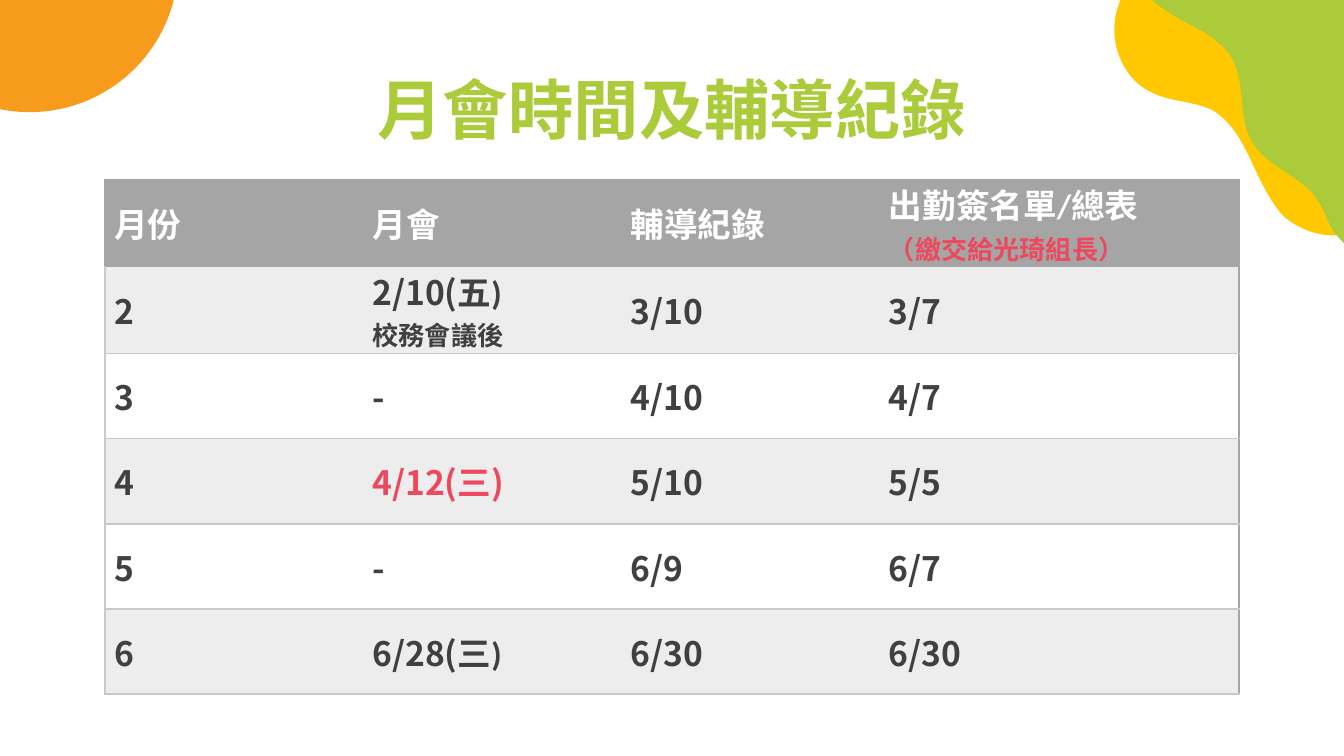
"""Build a slide with a monthly meeting and record schedule table."""
from lxml import etree
from pptx import Presentation
from pptx import util as u
from pptx.dml import color
from pptx.enum import shapes, text
from pptx.oxml import ns

COLORS = {
    "green": "ABCB3B", "yellow": "FFC800", "orange": "F79B1D", "red": "EE485E",
    "dark": "404040", "white": "FFFFFF", "header": "A5A5A5", "band": "EDEDED",
    "rule": "C9C9C9",
}
NOTO, CALIBRI = "Noto Sans CJK SC", "Calibri"
SLIDE_WIDTH, SLIDE_HEIGHT = 25.4, 14.29
COLUMN_WIDTHS = [4.88, 4.88, 4.88, 6.8]
ROW_HEIGHT = 1.61

YELLOW_START = (21.16, 0)
YELLOW_CURVES = [
    ((21.16, 0.03), (21.16, 0.03), (21.16, 0.05)),
    ((20.9, 0.66), (21.16, 1.47), (21.77, 1.75)),
    ((22.12, 1.93), (22.56, 1.91), (22.91, 2.08)),
    ((23.27, 2.29), (23.47, 2.67), (23.65, 3.05)),
    ((23.83, 3.43), (24, 3.81), (24.26, 4.09)),
    ((24.56, 4.34), (24.92, 4.47), (25.3, 4.45)),
    ((25.32, 4.45), (25.37, 4.42), (25.4, 4.42)),
]
GREEN_START = (21.77, 0)
GREEN_CURVES = [
    ((21.97, 0.18), (22.23, 0.33), (22.48, 0.46)),
    ((22.73, 0.58), (22.99, 0.74), (23.19, 0.97)),
    ((23.6, 1.47), (23.34, 2.21), (23.7, 2.74)),
    ((23.98, 3.15), (24.56, 3.33), (24.87, 3.73)),
    ((25.02, 3.94), (25.07, 4.17), (25.2, 4.37)),
    ((25.27, 4.45), (25.32, 4.52), (25.4, 4.6)),
]

HEADERS = ["月份", "月會", "輔導紀錄", "出勤簽名單/總表"]
HEADER_NOTE = "（繳交給光琦組長）"
MEETING_NOTE = "校務會議後"
SCHEDULE = [
    ["2", ("2/10(", "五)"), "3/10", "3/7"],
    ["3", "-", "4/10", "4/7"],
    ["4", "4/12(三)", "5/10", "5/5"],
    ["5", "-", "6/9", "6/7"],
    ["6", ("6/28(", "三)"), "6/30", "6/30"],
]


def rgb(name):
    """Return a named colour."""
    return color.RGBColor.from_string(COLORS[name])


def add_run(paragraph, content, size, color_name, font=NOTO):
    """Add one bold run."""
    run = paragraph.add_run()
    run.text = content
    run.font.size = u.Pt(size)
    run.font.bold = True
    run.font.name = font
    run.font.color.rgb = rgb(color_name)
    east_asian = etree.SubElement(run.font._element, ns.qn("a:ea"))
    east_asian.set("typeface", NOTO)


def paint(shape, color_name):
    """Give a shape a flat fill without line or shadow."""
    shape.shadow.inherit = False
    shape.fill.solid()
    shape.fill.fore_color.rgb = rgb(color_name)
    shape.line.fill.background()


def bend_segments(shape, curves):
    """Turn the leading straight segments of a freeform into cubic curves."""
    lines = list(shape.element.iter(ns.qn("a:lnTo")))
    for line, curve in zip(lines, curves):
        bezier = etree.Element(ns.qn("a:cubicBezTo"))
        for x, y in curve:
            etree.SubElement(bezier, ns.qn("a:pt"), x=str(u.Cm(x) - shape.left),
                             y=str(u.Cm(y) - shape.top))
        line.getparent().replace(line, bezier)


def add_corner_blob(slide, start, curves, color_name):
    """Add a wavy shape filling the top right corner."""
    corners = [start] + [curve[-1] for curve in curves] + [(SLIDE_WIDTH, 0)]
    points = [(u.Cm(x), u.Cm(y)) for x, y in corners]
    builder = slide.shapes.build_freeform(*points[0], scale=1.0)
    builder.add_line_segments(points[1:], close=True)
    blob = builder.convert_to_shape()
    bend_segments(blob, curves)
    paint(blob, color_name)


def add_circle(slide, left, top, diameter, color_name):
    """Add a plain circle."""
    circle = slide.shapes.add_shape(
        shapes.MSO_SHAPE.OVAL, u.Cm(left), u.Cm(top), u.Cm(diameter), u.Cm(diameter))
    paint(circle, color_name)


def set_title(slide, content):
    """Place the title in front of the decorations and fill it."""
    title = slide.shapes.title
    title.element.getparent().append(title.element)
    title.left, title.top = u.Cm(2), u.Cm(1.24)
    title.width, title.height = u.Cm(21.4), u.Cm(1.6)
    frame = title.text_frame
    frame.word_wrap = True
    frame.auto_size = text.MSO_AUTO_SIZE.NONE
    frame.vertical_anchor = text.MSO_ANCHOR.MIDDLE
    frame.margin_left = frame.margin_right = u.Cm(0.25)
    frame.margin_top = frame.margin_bottom = u.Cm(0.25)
    paragraph = frame.paragraphs[0]
    paragraph.alignment = text.PP_ALIGN.CENTER
    add_run(paragraph, content, 35, "green")


def set_borders(cell, borders):
    """Set left, right, top and bottom lines, None meaning no line."""
    properties = cell._tc.get_or_add_tcPr()
    for side, color_name in zip("LRTB", borders):
        line = etree.SubElement(properties, ns.qn(f"a:ln{side}"), w=str(u.Pt(1)))
        if color_name is None:
            etree.SubElement(line, ns.qn("a:noFill"))
        else:
            fill = etree.SubElement(line, ns.qn("a:solidFill"))
            etree.SubElement(fill, ns.qn("a:srgbClr"), val=COLORS[color_name])


def format_cell(cell, row, column):
    """Set margins, borders and fill by position in the grid."""
    cell.margin_left = cell.margin_right = u.Cm(0.18)
    cell.margin_top = cell.margin_bottom = 0
    cell.vertical_anchor = text.MSO_ANCHOR.MIDDLE
    left = None if column else ("rule" if row else "header")
    right = "header" if column == len(COLUMN_WIDTHS) - 1 else None
    top = "rule" if row > 1 else "header"
    bottom = "rule" if row else "header"
    set_borders(cell, (left, right, top, bottom))
    if row and row % 2 == 0:
        cell.fill.background()
    else:
        cell.fill.solid()
        cell.fill.fore_color.rgb = rgb("band" if row else "header")


def write_cell(cell, content, color_name, font, note=None, note_color=None):
    """Write a value and an optional smaller second line."""
    parts = (content,) if isinstance(content, str) else content
    paragraph = cell.text_frame.paragraphs[0]
    paragraph.alignment = text.PP_ALIGN.JUSTIFY
    for index, part in enumerate(parts):
        add_run(paragraph, part, 18, color_name, CALIBRI if index else font)
    if note:
        paragraph = cell.text_frame.add_paragraph()
        paragraph.alignment = text.PP_ALIGN.JUSTIFY
        add_run(paragraph, note, 14, note_color, CALIBRI)


def add_schedule(slide):
    """Add the schedule table."""
    rows = [HEADERS] + SCHEDULE
    table = slide.shapes.add_table(
        len(rows), len(COLUMN_WIDTHS), u.Cm(1.98), u.Cm(3.4),
        u.Cm(sum(COLUMN_WIDTHS)), u.Cm(ROW_HEIGHT * len(rows))).table
    table.horz_banding = False
    for column, width in zip(table.columns, COLUMN_WIDTHS):
        column.width = u.Cm(width)
    notes = {(0, 3): (HEADER_NOTE, "red"), (1, 1): (MEETING_NOTE, "dark")}
    for row, values in enumerate(rows):
        table.rows[row].height = u.Cm(ROW_HEIGHT)
        for column, value in enumerate(values):
            cell = table.cell(row, column)
            format_cell(cell, row, column)
            color_name = "dark" if row else "white"
            if (row, column) == (3, 1):
                color_name = "red"
            write_cell(cell, value, color_name, NOTO if row else CALIBRI,
                       *notes.get((row, column), ()))


def main():
    """Build and save the presentation."""
    presentation = Presentation()
    presentation.slide_width = u.Cm(SLIDE_WIDTH)
    presentation.slide_height = u.Cm(SLIDE_HEIGHT)
    slide = presentation.slides.add_slide(presentation.slide_layouts[5])
    add_corner_blob(slide, YELLOW_START, YELLOW_CURVES, "yellow")
    add_corner_blob(slide, GREEN_START, GREEN_CURVES, "green")
    add_circle(slide, -2.25, -3.5, 5.62, "orange")
    set_title(slide, "月會時間及輔導紀錄")
    add_schedule(slide)
    presentation.save("out.pptx")


if __name__ == "__main__":
    main()
